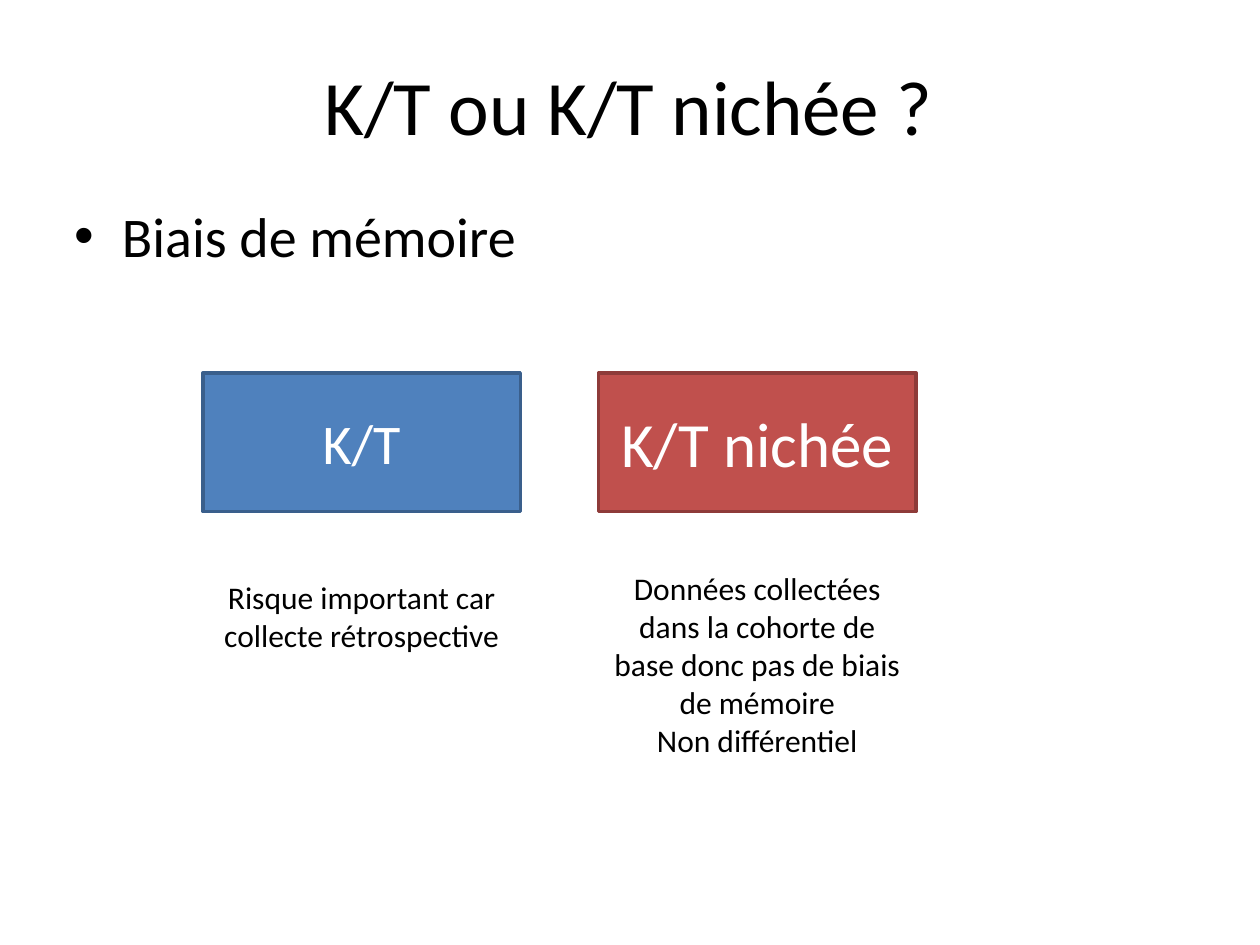
"""Build the slide comparing recall bias in K/T and nested K/T studies."""
from dataclasses import dataclass

from lxml.etree import SubElement
from pptx import Presentation
from pptx.dml.color import RGBColor
from pptx.enum.shapes import MSO_SHAPE
from pptx.enum.text import MSO_ANCHOR, MSO_AUTO_SIZE, PP_ALIGN
from pptx.oxml.ns import qn
from pptx.util import Pt

TITLE = "K/T ou K/T nichée ?"
BULLET = "Biais de mémoire"
STUDIES = [
    {
        "name": "K/T", "size": 32, "fill": "4F81BD", "line": "3A5F8C",
        "notes": ["Risque important car collecte rétrospective"],
        "notes_top": 454, "notes_height": 101,
    },
    {
        "name": "K/T nichée", "size": 36, "fill": "C0504D", "line": "8E3B39",
        "notes": [
            "Données collectées dans la cohorte de base donc pas de biais de mémoire",
            "Non différentiel",
        ],
        "notes_top": 447, "notes_height": 192,
    },
]

PX = 9144
SLIDE_SIZE = (1000, 750)
TITLE_BOX = (49, 21, 900, 125)
BODY_BOX = (49, 155, 900, 495)
FIRST_LEFT, BOX_TOP, BOX_WIDTH, BOX_HEIGHT = 161, 296, 252, 110
COLUMN_STEP = 314
BULLET_INDENT = 38


@dataclass(frozen=True)
class Theme:
    font: str = "Calibri"
    text: str = "000000"
    inverse: str = "FFFFFF"
    title: int = 44
    body: int = 32
    notes: int = 18
    outline: int = 2


THEME = Theme()


def emu(*lengths):
    return [length * PX for length in lengths]


def write(shape, lines, size, color=THEME.text, align=PP_ALIGN.CENTER, **frame_format):
    frame = shape.text_frame
    frame.text = "\n".join(lines)
    for name, value in {"word_wrap": True, **frame_format}.items():
        setattr(frame, name, value)
    for paragraph in frame.paragraphs:
        paragraph.alignment = align
        for run in paragraph.runs:
            for name, value in {"name": THEME.font, "size": Pt(size)}.items():
                setattr(run.font, name, value)
            run.font.color.rgb = RGBColor.from_string(color)


def add_bullet(paragraph):
    properties = paragraph._p.get_or_add_pPr()
    properties.set("marL", str(BULLET_INDENT * PX))
    properties.set("indent", str(-BULLET_INDENT * PX))
    SubElement(properties, qn("a:buFont"), typeface="Arial")
    SubElement(properties, qn("a:buChar"), char="•")


def add_title(slide):
    title = slide.shapes.title
    for name, value in zip(("left", "top", "width", "height"), emu(*TITLE_BOX)):
        setattr(title, name, value)
    write(title, [TITLE], THEME.title, vertical_anchor=MSO_ANCHOR.MIDDLE)


def add_body(slide):
    body = slide.shapes.add_textbox(*emu(*BODY_BOX))
    write(body, [BULLET], THEME.body, align=PP_ALIGN.LEFT)
    add_bullet(body.text_frame.paragraphs[0])


def add_study(slide, study, left):
    box = slide.shapes.add_shape(
        MSO_SHAPE.RECTANGLE, *emu(left, BOX_TOP, BOX_WIDTH, BOX_HEIGHT)
    )
    box.shadow.inherit = False
    box.fill.solid()
    box.fill.fore_color.rgb = RGBColor.from_string(study["fill"])
    box.line.color.rgb = RGBColor.from_string(study["line"])
    box.line.width = Pt(THEME.outline)
    write(box, [study["name"]], study["size"], THEME.inverse,
          vertical_anchor=MSO_ANCHOR.MIDDLE)

    notes = slide.shapes.add_textbox(
        *emu(left, study["notes_top"], BOX_WIDTH, study["notes_height"])
    )
    write(notes, study["notes"], THEME.notes,
          auto_size=MSO_AUTO_SIZE.SHAPE_TO_FIT_TEXT)


def main():
    presentation = Presentation()
    presentation.slide_width, presentation.slide_height = emu(*SLIDE_SIZE)
    slide = presentation.slides.add_slide(presentation.slide_layouts[5])
    add_title(slide)
    add_body(slide)
    for index, study in enumerate(STUDIES):
        add_study(slide, study, FIRST_LEFT + index * COLUMN_STEP)
    presentation.save("out.pptx")


if __name__ == "__main__":
    main()
